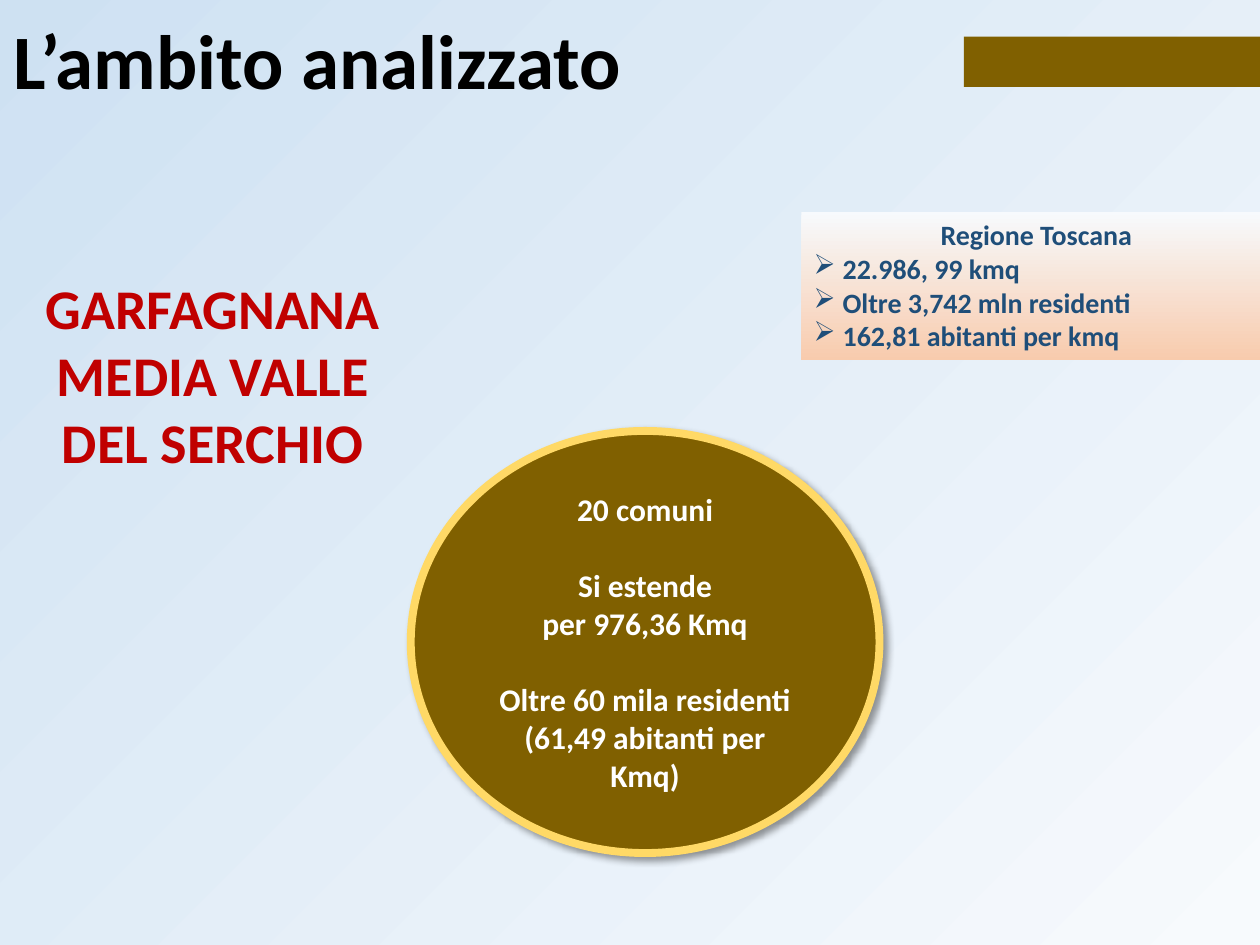
from lxml.etree import SubElement
from pptx import Presentation
from pptx.dml.color import RGBColor
from pptx.enum.shapes import MSO_SHAPE as Shape
from pptx.enum.text import MSO_ANCHOR as Anchor, MSO_AUTO_SIZE as AutoSize, PP_ALIGN as Align
from pptx.oxml.ns import qn
from pptx.util import Pt

TITLE = "L’ambito analizzato"
AREA = "GARFAGNANA MEDIA VALLE DEL SERCHIO"
REGION = "Regione Toscana"
REGION_FACTS = ["22.986, 99 kmq", "Oltre 3,742 mln residenti", "162,81 abitanti per kmq"]
AREA_FACTS = [
    ["20 comuni"],
    ["Si estende", "per 976,36 Kmq"],
    ["Oltre 60 mila residenti", "(61,49 abitanti per Kmq)"],
]

FONT = "Calibri"
BLACK = RGBColor(0x00, 0x00, 0x00)
WHITE = RGBColor(0xFF, 0xFF, 0xFF)
BROWN = RGBColor(0x80, 0x60, 0x00)
GOLD = RGBColor(0xFF, 0xD9, 0x66)
RED = RGBColor(0xC0, 0x00, 0x00)
NAVY = RGBColor(0x1F, 0x4E, 0x79)
PALE = RGBColor(0xF7, 0xFA, 0xFD)
SKY = RGBColor(0xCE, 0xE1, 0xF2)
PEACH = RGBColor(0xF8, 0xCB, 0xAD)

# left, top, width, height in points
TITLE_AT = (0.72, 5.76, 509.76, 62.64)
BAR_AT = (550.8, 20.88, 169.2, 28.8)
REGION_AT = (457.92, 120.96, 268.56, 84.96)
AREA_AT = (0.72, 152.64, 241.92, 123.84)
ELLIPSE_AT = (234.72, 246.24, 267.84, 241.2)
INDENT = Pt(16.56)
GROUP_GAP = Pt(22)


def points(values):
    return [Pt(value) for value in values]


def set_gradient(fill, start, end, angle):
    """Two-colour gradient; the angle runs counter-clockwise."""
    fill.gradient()
    fill.gradient_angle = angle
    for stop, color in zip(fill.gradient_stops, (start, end)):
        stop.color.rgb = color


def add_plain_shape(page, kind, place):
    shape = page.shapes.add_shape(kind, *points(place))
    shape.shadow.inherit = False
    shape.line.fill.background()
    return shape


def write(frame, lines, size, color, align):
    """Fill the frame with one bold paragraph per line and return them."""
    frame.word_wrap = True
    frame.text = "\n".join(lines)
    for para in frame.paragraphs:
        para.alignment = align
        font = para.font
        font.name, font.size, font.bold = FONT, Pt(size), True
        font.color.rgb = color
    return frame.paragraphs


def add_bullet(para, char):
    props = para._p.get_or_add_pPr()
    props.set("marL", str(INDENT))
    props.set("indent", str(-INDENT))
    bullet = SubElement(props, qn("a:buChar"), char=char)
    props.find(qn("a:defRPr")).addprevious(bullet)


def add_drop_shadow(shape):
    effects = shape._element.spPr.find(qn("a:effectLst"))
    shadow = SubElement(effects, qn("a:outerShdw"), blurRad=str(Pt(4)), dist=str(Pt(3)),
                        dir=str(45 * 60000), algn="tl", rotWithShape="0")
    color = SubElement(shadow, qn("a:srgbClr"), val=str(BLACK))
    SubElement(color, qn("a:alpha"), val="40000")


def add_title(page):
    title = page.shapes.title
    title.left, title.top, title.width, title.height = points(TITLE_AT)
    title.text_frame.auto_size = AutoSize.NONE
    title.text_frame.vertical_anchor = Anchor.MIDDLE
    write(title.text_frame, [TITLE], 44, BLACK, Align.LEFT)[0].line_spacing = 0.9


def add_region_panel(page):
    panel = add_plain_shape(page, Shape.RECTANGLE, REGION_AT)
    set_gradient(panel.fill, PALE, PEACH, 270)
    frame = panel.text_frame
    frame.vertical_anchor = Anchor.TOP
    heading, *facts = write(frame, [REGION, *REGION_FACTS], 16, NAVY, Align.LEFT)
    heading.alignment = Align.CENTER
    for para in facts:
        add_bullet(para, "➢")


def add_area_ellipse(page):
    ellipse = add_plain_shape(page, Shape.OVAL, ELLIPSE_AT)
    ellipse.fill.solid()
    ellipse.fill.fore_color.rgb = BROWN
    ellipse.line.color.rgb = GOLD
    ellipse.line.width = Pt(4.5)
    add_drop_shadow(ellipse)
    frame = ellipse.text_frame
    frame.vertical_anchor = Anchor.MIDDLE
    frame.margin_left = frame.margin_right = Pt(5)
    frame.margin_top = frame.margin_bottom = Pt(3)
    lines = [line for group in AREA_FACTS for line in group]
    paras = write(frame, lines, 18, WHITE, Align.CENTER)
    start = 0
    for group in AREA_FACTS[:-1]:
        start += len(group)
        paras[start].space_before = GROUP_GAP


def main():
    deck = Presentation()
    deck.slide_width, deck.slide_height = Pt(720), Pt(540)
    page = deck.slides.add_slide(deck.slide_layouts.get_by_name("Title Only"))
    set_gradient(page.background.fill, PALE, SKY, 135)

    bar = add_plain_shape(page, Shape.RECTANGLE, BAR_AT)
    bar.fill.solid()
    bar.fill.fore_color.rgb = BROWN
    add_title(page)
    add_region_panel(page)
    area = page.shapes.add_textbox(*points(AREA_AT))
    write(area.text_frame, [AREA], 32, RED, Align.CENTER)[0].space_after = Pt(4.5)
    add_area_ellipse(page)
    deck.save("out.pptx")


if __name__ == "__main__":
    main()
